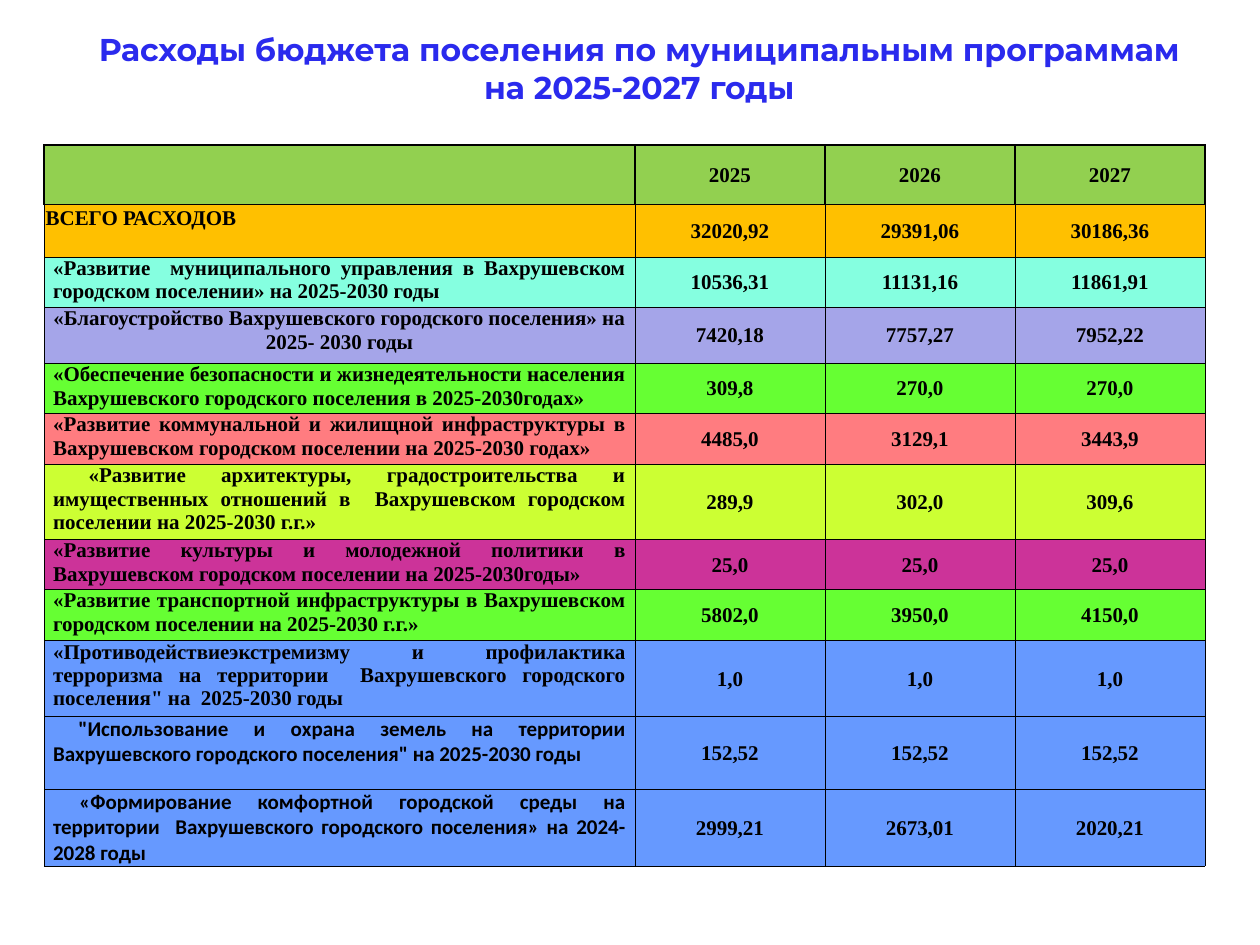
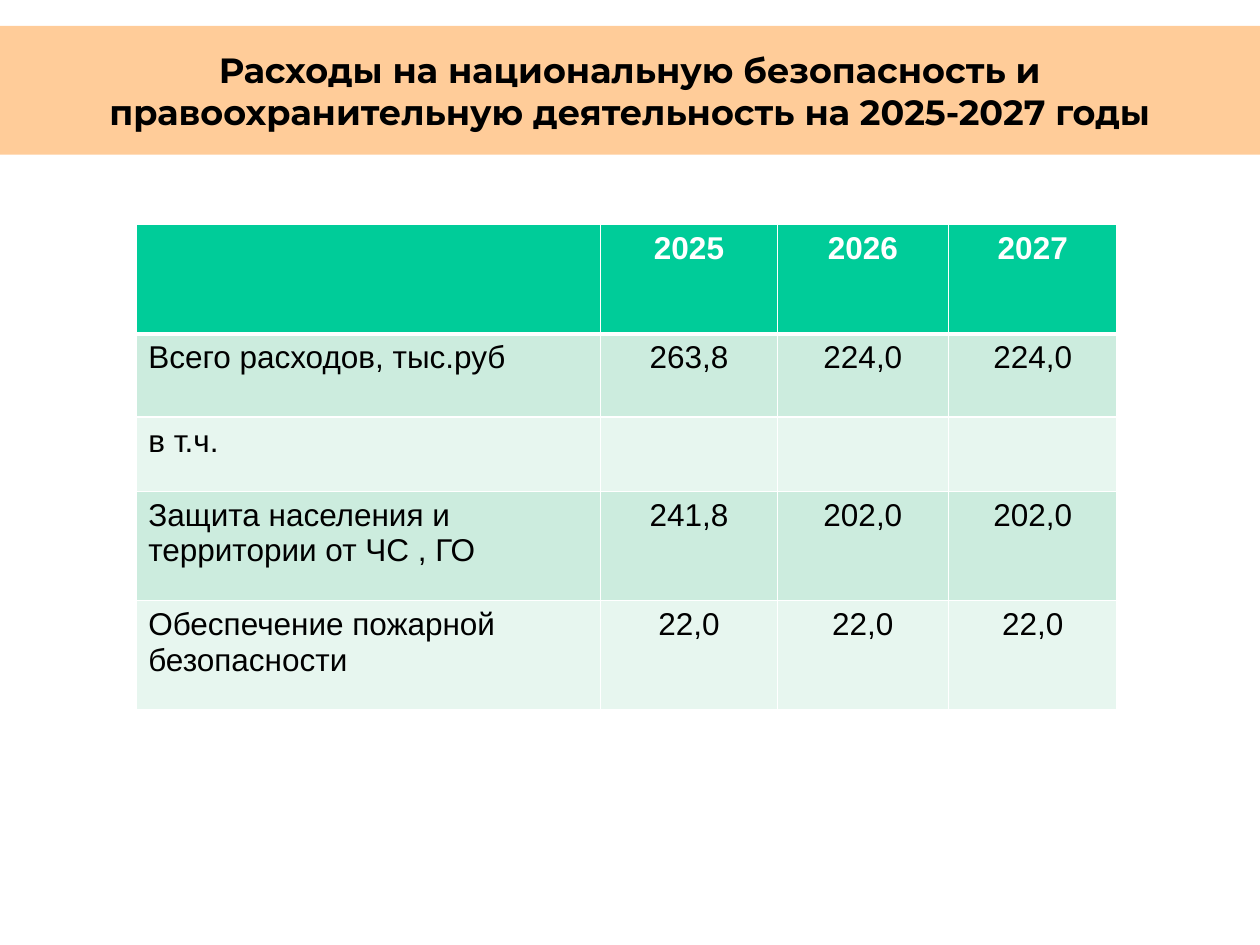
from dataclasses import dataclass
from lxml.etree import SubElement
from pptx import Presentation
from pptx.dml.color import RGBColor
from pptx.enum.text import MSO_ANCHOR, MSO_AUTO_SIZE, PP_ALIGN
from pptx.oxml.ns import qn
from pptx.util import Cm, Pt


@dataclass(frozen=True)
class Theme:
    black: str = "000000"
    white: str = "FFFFFF"
    blue: str = "2A2AED"
    band: str = "FFCC99"
    program_head: str = "92D050"
    security_head: str = "00CC99"
    stripes: tuple = ("CCECDE", "E7F6EF")
    title_font: str = "Montserrat"
    serif: str = "Times New Roman"
    sans: str = "Arial"
    alt: str = "Calibri"
    program_title_size: int = 18
    security_title_size: int = 20
    program_size: int = 12
    security_size: int = 18


T = Theme()
YEARS = ("2025", "2026", "2027")

PROGRAM_TITLE = "Расходы бюджета поселения по муниципальным программам\nна 2025-2027 годы"
PROGRAMS = [
    ("ВСЕГО РАСХОДОВ", "32020,92", "29391,06", "30186,36"),
    ("«Развитие  муниципального управления в Вахрушевском городском поселении» на 2025-2030 годы",
     "10536,31", "11131,16", "11861,91"),
    ("«Благоустройство Вахрушевского городского поселения» на 2025- 2030 годы",
     "7420,18", "7757,27", "7952,22"),
    ("«Обеспечение безопасности и жизнедеятельности населения Вахрушевского городского поселения в 2025-2030годах»",
     "309,8", "270,0", "270,0"),
    ("«Развитие коммунальной и жилищной инфраструктуры в Вахрушевском городском поселении на 2025-2030 годах»",
     "4485,0", "3129,1", "3443,9"),
    (" «Развитие архитектуры, градостроительства и имущественных отношений в  Вахрушевском городском поселении на 2025-2030 г.г.»",
     "289,9", "302,0", "309,6"),
    ("«Развитие культуры и молодежной политики в Вахрушевском городском поселении на 2025-2030годы»",
     "25,0", "25,0", "25,0"),
    ("«Развитие транспортной инфраструктуры в Вахрушевском городском поселении на 2025-2030 г.г.»",
     "5802,0", "3950,0", "4150,0"),
    ("«Противодействиеэкстремизму и профилактика терроризма на территории  Вахрушевского городского поселения\" на  2025-2030 годы",
     "1,0", "1,0", "1,0"),
    (" \"Использование и охрана земель на территории Вахрушевского городского поселения\" на 2025-2030 годы",
     "152,52", "152,52", "152,52"),
    (" «Формирование комфортной городской среды на территории  Вахрушевского городского поселения» на 2024-2028 годы",
     "2999,21", "2673,01", "2020,21"),
]
PROGRAM_FILLS = ["FFC000", "85FFE0", "A5A5E9", "66FF33", "FF7C80", "CCFF33",
                 "CC3399", "66FF33", "6699FF", "6699FF", "6699FF"]
PROGRAM_HEIGHTS = [1.21, 1.05, 1.01, 1.13, 1.01, 1.03, 1.51, 1.01, 1.03, 1.53, 1.47, 1.53]
TOTAL_ROW, CENTRED_ROW, ALT_FONT_ROWS = 1, 3, (10, 11)

SECURITY_TITLE = "Расходы на национальную безопасность и правоохранительную деятельность на 2025-2027 годы"
SECURITY = [
    ("Всего расходов, тыс.руб", "263,8", "224,0", "224,0"),
    ("в т.ч.", "", "", ""),
    ("Защита населения и территории от ЧС , ГО", "241,8", "202,0", "202,0"),
    ("Обеспечение пожарной безопасности", "22,0", "22,0", "22,0"),
]
SECURITY_HEIGHTS = [2.2, 1.68, 1.5, 2.2, 2.2]


def rgb(color):
    return RGBColor.from_string(color)


def style(p, font, size, color, bold, align):
    p.alignment = align
    for r in p.runs:
        r.font.name, r.font.size, r.font.bold = font, Pt(size), bold
        r.font.color.rgb = rgb(color)


def set_insets(target, insets):
    (target.margin_left, target.margin_top,
     target.margin_right, target.margin_bottom) = map(Cm, insets)


def add_titled_slide(prs, text, box, size, color, anchor, fill=None):
    s = prs.slides.add_slide(prs.slide_layouts[5])
    sp = s.shapes.title
    sp.left, sp.top, sp.width, sp.height = map(Cm, box)
    if fill:
        sp.fill.solid()
        sp.fill.fore_color.rgb = rgb(fill)
    tf = sp.text_frame
    tf.text = text
    tf.word_wrap, tf.auto_size, tf.vertical_anchor = True, MSO_AUTO_SIZE.NONE, anchor
    set_insets(tf, (0.25, 0.13, 0.25, 0.13))
    for p in tf.paragraphs:
        style(p, T.title_font, size, color, True, PP_ALIGN.CENTER)
    return s


def set_borders(cell, color, widths):
    tcPr = cell._tc.get_or_add_tcPr()
    for side, width in zip("LRTB", widths):
        ln = SubElement(tcPr, qn(f"a:ln{side}"), w=str(Pt(width)))
        SubElement(SubElement(ln, qn("a:solidFill")), qn("a:srgbClr"), val=color)


def add_budget_table(s, rows, left, top, widths, heights, fills, line, head_line, line_color, cell_format):
    rows = [("", *YEARS), *rows]
    frame = s.shapes.add_table(len(rows), len(widths), Cm(left), Cm(top),
                               Cm(sum(widths)), Cm(sum(heights)))
    table = frame.table
    table.first_row = table.horz_banding = False
    for col, width in zip(table.columns, widths):
        col.width = Cm(width)
    for i, (values, height, fill) in enumerate(zip(rows, heights, fills)):
        table.rows[i].height = Cm(height)
        side = 1 if i == 0 else line
        above = (1, head_line, line)[min(i, 2)]
        below = head_line if i == 0 else line
        for j, value in enumerate(values):
            cell = table.cell(i, j)
            set_borders(cell, line_color, (side, side, above, below))
            cell.fill.solid()
            cell.fill.fore_color.rgb = rgb(fill)
            cell.text = value
            cell_format(cell, i, j)


def format_program_cell(cell, i, j):
    label = j == 0 and i > 0
    named = label and i != TOTAL_ROW
    cell.vertical_anchor = MSO_ANCHOR.TOP if label else MSO_ANCHOR.MIDDLE
    set_insets(cell, (0.18, 0, 0.18, 0) if named else (0.03, 0.03, 0.03, 0))
    font = T.alt if label and i in ALT_FONT_ROWS else T.serif
    align = PP_ALIGN.JUSTIFY if label and i != CENTRED_ROW else PP_ALIGN.CENTER
    style(cell.text_frame.paragraphs[0], font, T.program_size, T.black, True, align)


def format_security_cell(cell, i, j):
    set_insets(cell, (0.25, 0.13, 0.25, 0.13))
    style(cell.text_frame.paragraphs[0], T.sans, T.security_size,
          T.black if i else T.white, i == 0, PP_ALIGN.CENTER if j else PP_ALIGN.LEFT)


def main():
    prs = Presentation()
    prs.slide_width, prs.slide_height = Cm(25.4), Cm(19.05)

    s = add_titled_slide(prs, PROGRAM_TITLE, (0.89, 0.48, 24, 1.8),
                         T.program_title_size, T.blue, MSO_ANCHOR.TOP)
    add_budget_table(s, PROGRAMS, 0.89, 2.92, [11.91] + [3.83] * 3, PROGRAM_HEIGHTS,
                     [T.program_head, *PROGRAM_FILLS], 0.5, 0.5, T.black, format_program_cell)

    s = add_titled_slide(prs, SECURITY_TITLE, (0, 0.52, 25.4, 2.6),
                         T.security_title_size, T.black, MSO_ANCHOR.MIDDLE, T.band)
    add_budget_table(s, SECURITY, 2.74, 4.53, [9.37, 3.56, 3.45, 3.4], SECURITY_HEIGHTS,
                     [T.security_head, *T.stripes * 2], 1, 3, T.white, format_security_cell)

    prs.save("out.pptx")


if __name__ == "__main__":
    main()
